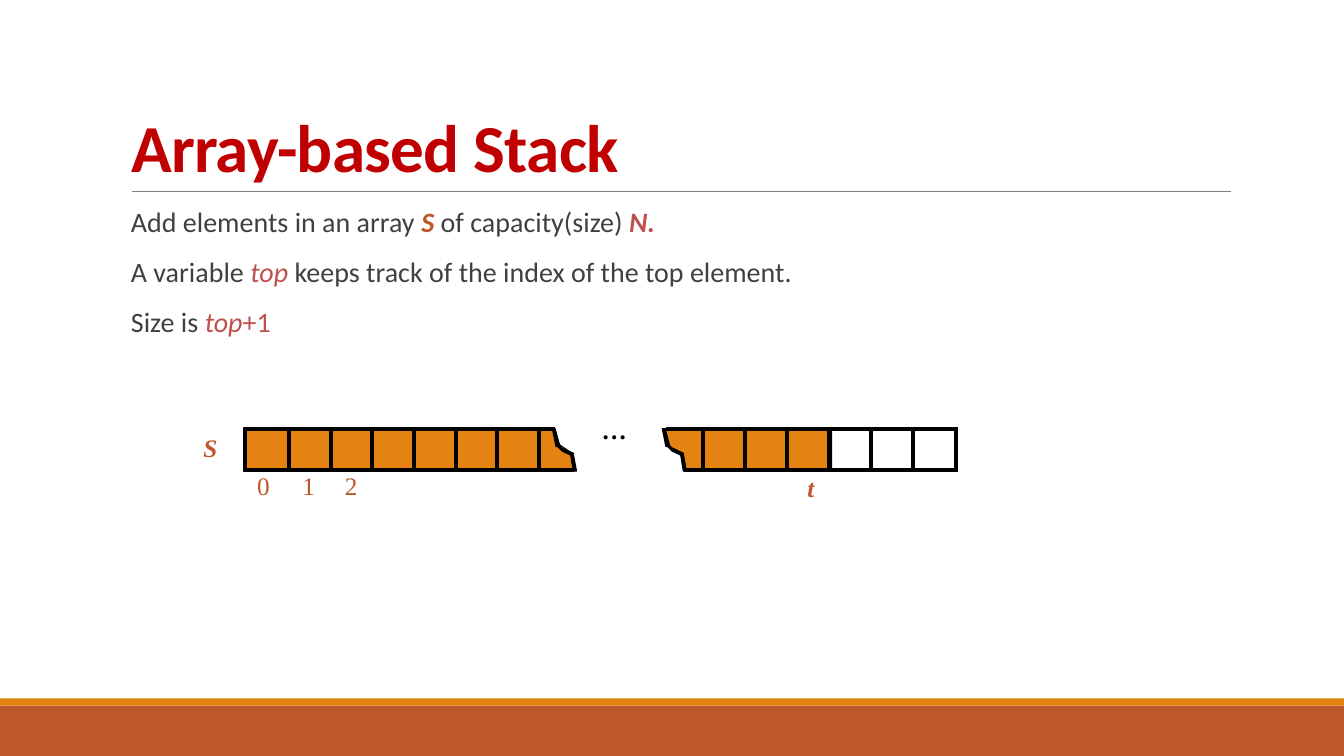
from lxml.etree import SubElement as Sub
from pptx import Presentation
from pptx.dml.color import RGBColor as Rgb
from pptx.enum.shapes import MSO_CONNECTOR as Link, MSO_SHAPE as Kind
from pptx.enum.text import MSO_ANCHOR as Anchor, MSO_AUTO_SIZE as Auto, PP_ALIGN as Align
from pptx.oxml.ns import qn
from pptx.util import Cm, Pt

HUES = {"rust": "BD582C", "gold": "E48312", "red": "C00000", "rose": "C0504D",
        "text": "404040", "rule": "808080", "ink": "000000"}

LINES = [
    [("Add elements in an array ", "text", ""), ("S", "rust", "bi"),
     (" of capacity(size) ", "text", ""), ("N.", "rose", "bi")],
    [("A variable ", "text", ""), ("top", "rose", "i"),
     (" keeps track of the index of the top element.", "text", "")],
    [("Size is ", "text", ""), ("top", "rose", "i"), ("+1", "rose", "")],
]

TOP, LOW, THICK = 10.8, 11.86, 0.07
FILLED = [
    [(20.96, LOW), (20.96, TOP), (16.76, TOP), (16.87, 11.25), (17.22, 11.43), (17.27, LOW)],
    [(6.17, TOP), (6.17, LOW), (14.45, LOW), (14.38, 11.4), (14.02, 11.15), (13.97, TOP)],
]
RAILS = [(6.15, 10.77, 7.82), (6.17, 11.81, 8.28), (16.79, 10.77, 7.34), (17.25, 11.81, 6.83)]
POSTS = ([6.15, 24.05] + [7.25 + 1.05 * i for i in range(7)]
         + [17.68 + 1.06 * i for i in range(6)])
TEAR = [
    [(0.07, 0), (0.16, 0.33), (0.19, 0.43), (0.27, 0.53), (0.25, 0.57),
     (0.14, 0.46), (0.09, 0.45), (0.07, 0.35), (0, 0)],
    [(0.28, 0.51), (0.53, 0.62), (0.53, 0.64), (0.46, 0.64), (0.51, 0.69), (0.25, 0.57)],
    [(0.53, 0.64), (0.46, 0.64), (0.53, 1.07), (0.61, 1.07)],
]
LABELS = [
    ("S", 4.9, 10.9, 0.81, "rust", "bi"), ("0", 6.48, 11.86, 0.33, "rust", ""),
    ("1", 7.62, 11.86, 0.33, "rust", ""), ("2", 8.69, 11.86, 0.33, "rust", ""),
    ("…", 15.16, 10.44, 0.64, "ink", "b"), ("t", 20.04, 11.91, 0.79, "rust", "bi"),
]


class Deck:
    """Holds the style and the current slide."""

    def __init__(self):
        self.file = Presentation()
        self.file.slide_width, self.file.slide_height = Cm(33.87), Cm(19.05)
        self.slide = self.file.slides.add_slide(self.file.slide_layouts[1])
        self.shapes = self.slide.shapes

    def hue(self, name):
        return Rgb.from_string(HUES[name])

    def style(self, font, hue, marks="", size=None, face=None):
        font.color.rgb = self.hue(hue)
        font.bold, font.italic = "b" in marks, "i" in marks
        if size:
            font.size, font.name = Pt(size), face

    def place(self, shape, x, y, wide, high):
        shape.left, shape.top, shape.width, shape.height = Cm(x), Cm(y), Cm(wide), Cm(high)

    def paint(self, shape, fill, line=None):
        shape.shadow.inherit = False
        shape.fill.solid()
        shape.fill.fore_color.rgb = self.hue(fill)
        if line:
            shape.line.color.rgb = self.hue(line)
            shape.line.width = Pt(0.75)
        else:
            shape.line.fill.background()

    def bar(self, x, y, wide, high, fill, line=None):
        box = self.shapes.add_shape(Kind.RECTANGLE, Cm(x), Cm(y), Cm(wide), Cm(high))
        self.paint(box, fill, line)

    def patch(self, dots, fill, x=0, y=0):
        spots = [(Cm(x + a), Cm(y + b)) for a, b in dots]
        pen = self.shapes.build_freeform(*spots[0])
        pen.add_line_segments(spots[1:], close=True)
        self.paint(pen.convert_to_shape(), fill, "ink")

    def rule(self, x, y, end):
        line = self.shapes.add_connector(Link.STRAIGHT, Cm(x), Cm(y), Cm(end), Cm(y))
        line.line.color.rgb = self.hue("rule")
        line.line.width = Pt(0.5)
        Sub(line._element.spPr, qn("a:effectLst"))

    def title(self, text):
        head = self.shapes.title
        self.place(head, 3.05, 0.79, 27.94, 4.04)
        frame = head.text_frame
        frame.text = text
        frame.auto_size, frame.vertical_anchor = Auto.NONE, Anchor.BOTTOM
        para = frame.paragraphs[0]
        para.alignment, para.line_spacing = Align.LEFT, 0.85
        self.style(para.font, "red", "b", 48, "Calibri")
        para.runs[0]._r.get_or_add_rPr().set("spc", "-50")

    def body(self, lines):
        list_box = self.slide.placeholders[1]
        self.place(list_box, 3.05, 5.13, 27.94, 11.18)
        frame = list_box.text_frame
        frame.auto_size = Auto.NONE
        frame.margin_left = frame.margin_right = 0
        for i, line in enumerate(lines):
            para = frame.add_paragraph() if i else frame.paragraphs[0]
            para.line_spacing = 0.9
            para.space_before, para.space_after = Pt(12), Pt(2)
            props = para._p.get_or_add_pPr()
            props.set("marL", str(Cm(0.25)))
            props.set("indent", str(-Cm(0.25)))
            Sub(props, qn("a:buChar")).set("char", " ")
            para.font.size, para.font.name = Pt(20), "Calibri"
            for text, hue, marks in line:
                run = para.add_run()
                run.text = text
                self.style(run.font, hue, marks)

    def label(self, text, x, y, wide, hue, marks):
        box = self.shapes.add_textbox(Cm(x), Cm(y), Cm(wide), Cm(0.76))
        frame = box.text_frame
        frame.margin_left = frame.margin_right = frame.margin_top = frame.margin_bottom = 0
        frame.word_wrap = "i" in marks
        para = frame.paragraphs[0]
        para.text = text
        para.alignment = Align.CENTER if "i" in marks else Align.LEFT
        self.style(para.font, hue, marks, 18, "Times New Roman")


def main():
    deck = Deck()
    deck.bar(0, 17.78, 33.87, 1.27, "rust")
    deck.bar(0, 17.6, 33.87, 0.18, "gold")
    deck.rule(3.33, 4.83, 31.01)
    deck.title("Array-based Stack")
    deck.body(LINES)
    for dots in FILLED:
        deck.patch(dots, "gold")
    for x, y, wide in RAILS:
        deck.bar(x, y, wide, THICK, "ink", "ink")
    for x in POSTS:
        deck.bar(x, TOP, THICK, 1.08, "ink", "ink")
    for x in (13.92, 16.69):
        for dots in TEAR:
            deck.patch(dots, "ink", x, TOP)
    for item in LABELS:
        deck.label(*item)
    deck.file.save("out.pptx")


if __name__ == "__main__":
    main()
